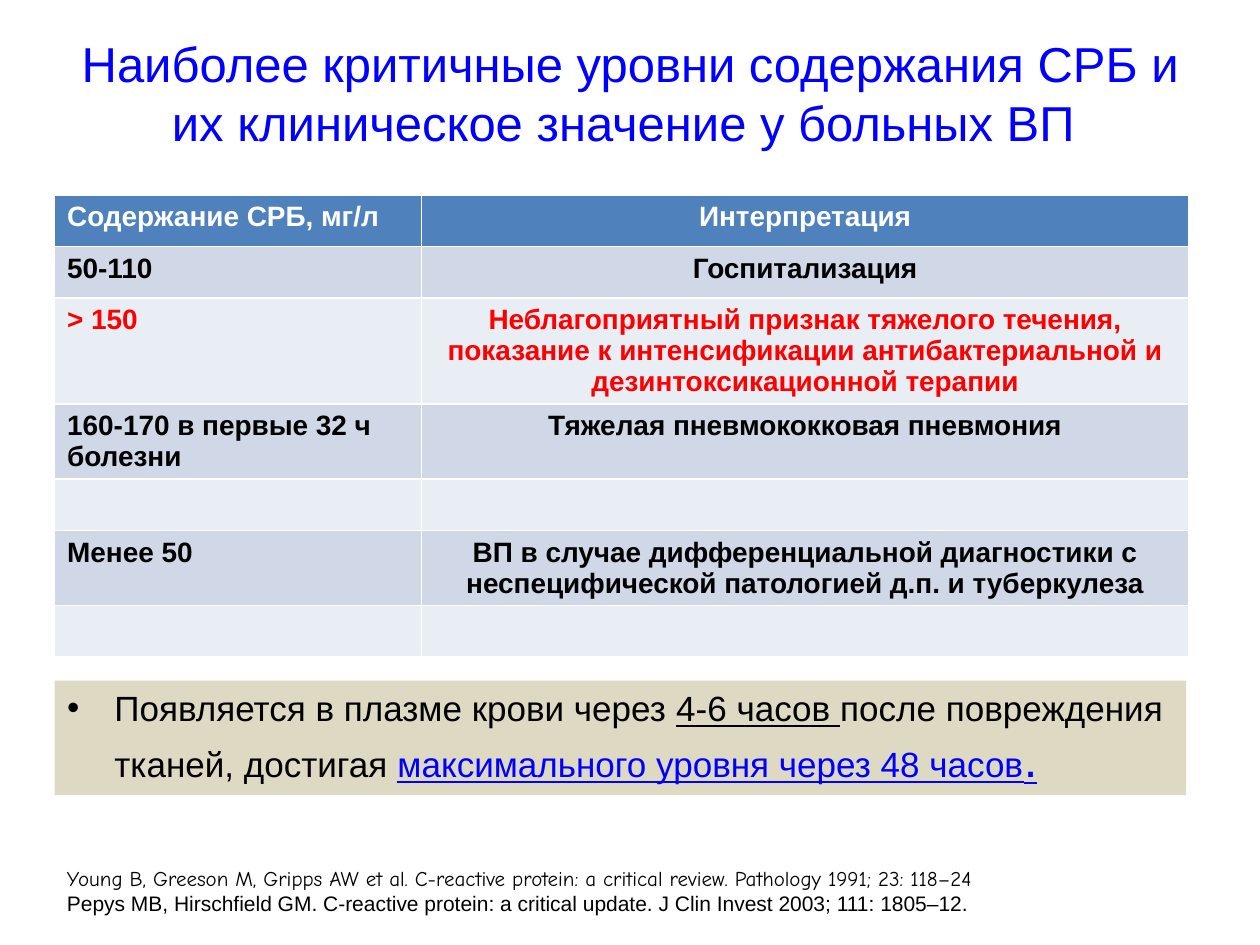
"""Build a slide on critical CRP levels and their clinical meaning."""
from dataclasses import dataclass

from pptx import Presentation
from pptx.dml.color import RGBColor
from pptx.enum.text import MSO_ANCHOR, MSO_AUTO_SIZE, PP_ALIGN
from pptx.util import Cm, Pt

LEFT, MID = PP_ALIGN.LEFT, PP_ALIGN.CENTER
ANCHOR = MSO_ANCHOR.MIDDLE
FIXED = MSO_AUTO_SIZE.NONE
HUES = {
    "blue": "0000FF", "red": "FF0000", "black": "000000", "white": "FFFFFF",
    "head": "4F81BD", "dark": "D0D8E8", "pale": "E9EDF4", "sand": "DDD9C3",
}


@dataclass
class Piece:
    text: str
    size: int
    hue: str = "black"
    face: str = "Arial"
    bold: bool = False
    line: bool = False


@dataclass
class Row:
    level: str
    sense: str
    hue: str = "black"


ROWS = [
    Row("Содержание СРБ, мг/л", "Интерпретация", "white"),
    Row("50-110", "Госпитализация"),
    Row("> 150", "Неблагоприятный признак тяжелого течения, показание к "
        "интенсификации антибактериальной и дезинтоксикационной терапии", "red"),
    Row("160-170 в первые 32 ч болезни", "Тяжелая пневмококковая пневмония"),
    Row("", ""),
    Row("Менее 50", "ВП в случае дифференциальной диагностики с "
        "неспецифической патологией д.п. и туберкулеза"),
    Row("", ""),
]
FACTS = [
    Piece("Появляется в плазме крови через ", 20),
    Piece("4-6 часов ", 20, line=True),
    Piece("после повреждения тканей, достигая ", 20),
    Piece("максимального уровня через 48 часов", 20, "blue", line=True),
    Piece(".", 28, "blue", line=True),
]
SOURCES = [
    Piece("Young B, Greeson M, Gripps AW et al. C-reactive protein: a critical "
          "review. Pathology 1991; 23: 118–24", 12, face="Comic Neue"),
    Piece("Pepys MB, Hirschfield GM. C-reactive protein: a critical update. "
          "J Clin Invest 2003; 111: 1805–12.", 12),
]


def tint(hue: str) -> RGBColor:
    """Return the colour for a hue name."""
    return RGBColor.from_string(HUES[hue])


def paint(part, hue: str) -> None:
    """Fill a shape or cell with one colour."""
    part.fill.solid()
    part.fill.fore_color.rgb = tint(hue)


def place(shape, left: float, top: float, width: float, height: float) -> None:
    """Move and size a shape, in centimetres."""
    spots = {"left": left, "top": top, "width": width, "height": height}
    for name, value in spots.items():
        setattr(shape, name, Cm(value))


def write(para, pieces: list[Piece], align=LEFT) -> None:
    """Add formatted runs to a paragraph."""
    para.alignment = align
    for piece in pieces:
        run = para.add_run()
        run.text = piece.text
        form = {"name": piece.face, "size": Pt(piece.size),
                "bold": piece.bold, "underline": piece.line}
        for name, value in form.items():
            setattr(run.font, name, value)
        run.font.color.rgb = tint(piece.hue)


def draw_table(slide, rows: list[Row]) -> None:
    """Draw the table of levels and meanings."""
    frame = slide.shapes.add_table(
        len(rows), 2, Cm(1.1), Cm(3.93), Cm(22.86), Cm(1.04 * len(rows)))
    table = frame.table
    for col, width in zip(table.columns, (7.4, 15.46)):
        col.width = Cm(width)
    for i, row in enumerate(rows):
        fill = "head" if i == 0 else ("pale", "dark")[i % 2]
        for j, (text, align) in enumerate([(row.level, LEFT), (row.sense, MID)]):
            cell = table.cell(i, j)
            paint(cell, fill)
            if text:
                write(cell.text_frame.paragraphs[0],
                      [Piece(text, 16, row.hue, bold=True)], align)


def main() -> None:
    """Build and save the slide."""
    deck = Presentation()
    deck.slide_width, deck.slide_height = Cm(25.4), Cm(19.05)
    slide = deck.slides.add_slide(deck.slide_layouts[1])
    title, body = slide.placeholders

    place(title, 1.27, 1.17, 22.86, 1.37)
    title.text_frame.auto_size = FIXED
    title.text_frame.vertical_anchor = ANCHOR
    write(title.text_frame.paragraphs[0], [Piece(
        "Наиболее критичные уровни содержания СРБ и их клиническое "
        "значение у больных ВП ", 28, "blue")], MID)

    draw_table(slide, ROWS)

    place(body, 1.1, 13.72, 22.81, 2.31)
    paint(body, "sand")
    body.text_frame.auto_size = FIXED
    write(body.text_frame.paragraphs[0], FACTS)

    notes = slide.shapes.add_textbox(Cm(1.1), Cm(17.32), Cm(22.81), Cm(1.27))
    frame = notes.text_frame
    frame.word_wrap = True
    for i, piece in enumerate(SOURCES):
        write(frame.add_paragraph() if i else frame.paragraphs[0], [piece])

    deck.save("out.pptx")


if __name__ == "__main__":
    main()
